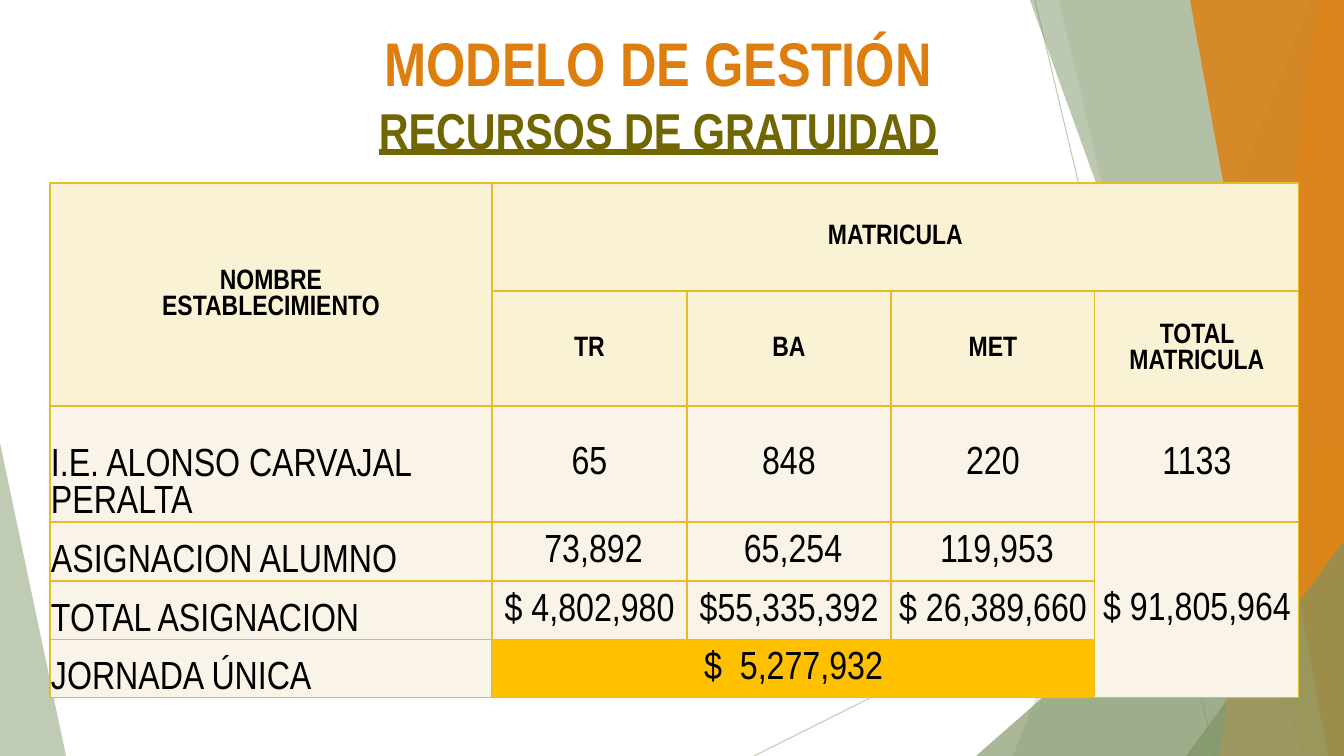
from lxml import etree
from pptx import Presentation
from pptx.dml.color import RGBColor as Rgb
from pptx.enum.shapes import MSO_CONNECTOR as Link
from pptx.enum.text import MSO_ANCHOR as Anchor, PP_ALIGN as Align
from pptx.oxml.ns import qn
from pptx.util import Pt

HUES = {
    "sage": "A5B592", "moss": "7D9263", "amber": "F3A447", "orange": "DD7E0E",
    "olive": "706702", "black": "000000", "gold": "E7BC29",
    "head": "FAF2D4", "body": "FAF3E8", "mark": "FFC000",
}
FONT = "Arial Narrow"
WIDE, HIGH = 1344, 756


def px(n):
    return round(n * 914400 / 100.8)


class Board:
    """Draws styled elements on one slide, with lengths in px."""

    def __init__(self, deck):
        deck.slide_width, deck.slide_height = px(WIDE), px(HIGH)
        self.slide = deck.slides.add_slide(deck.slide_layouts[6])
        self.shapes = self.slide.shapes

    def fade(self, fill, hue, alpha):
        fill.solid()
        fill.fore_color.rgb = Rgb.from_string(HUES[hue])
        tint = fill._xPr.find(".//" + qn("a:srgbClr"))
        etree.SubElement(tint, qn("a:alpha"), val=str(alpha * 1000))

    def facet(self, points, hue, alpha):
        pen = self.shapes.build_freeform(*map(px, points[0]))
        pen.add_line_segments([(px(x), px(y)) for x, y in points[1:]])
        shape = pen.convert_to_shape()
        shape.shadow.inherit = False
        shape.line.fill.background()
        self.fade(shape.fill, hue, alpha)

    def line(self, ends, hue, alpha):
        link = self.shapes.add_connector(Link.STRAIGHT, *map(px, ends))
        link.line.width = Pt(0.75)
        self.fade(link.line.fill, hue, alpha)
        etree.SubElement(link._element.spPr, qn("a:effectLst"))

    def style(self, run, size, hue, bold=False, under=False):
        font = run.font
        font.name, font.size, font.bold = FONT, Pt(size), bold
        font.underline = under
        font.color.rgb = Rgb.from_string(HUES[hue])

    def title(self, box, text, looks):
        """Sets one line of text per look, a (size, hue, underline) triple."""
        frame = self.shapes.add_textbox(*map(px, box)).text_frame
        frame.word_wrap = True
        frame.text = text
        para = frame.paragraphs[0]
        para.alignment = Align.CENTER
        for run, (size, hue, under) in zip(para.runs, looks):
            self.style(run, size, hue, True, under)

    def edge(self, cell):
        props = cell._tc.get_or_add_tcPr()
        for i, side in enumerate(("lnL", "lnR", "lnT", "lnB")):
            line = etree.Element(qn("a:" + side), w=str(Pt(1)))
            fill = etree.SubElement(line, qn("a:solidFill"))
            etree.SubElement(fill, qn("a:srgbClr"), val=HUES["gold"])
            props.insert(i, line)

    def cell(self, cell, text, hue, size, bold, left):
        cell.fill.solid()
        cell.fill.fore_color.rgb = Rgb.from_string(HUES[hue])
        self.edge(cell)
        cell.margin_left = cell.margin_right = cell.margin_top = px(1)
        cell.margin_bottom = 0
        cell.vertical_anchor = Anchor.BOTTOM if left else Anchor.MIDDLE
        cell.text_frame.text = text
        for para in cell.text_frame.paragraphs:
            para.alignment = Align.LEFT if left else Align.CENTER
            for run in para.runs:
                self.style(run, size, "black", bold)

    def table(self, spot, cols, rows, data, spans, marks):
        box = (*spot, sum(cols), sum(rows))
        grid = self.shapes.add_table(len(rows), len(cols), *map(px, box)).table
        for col, wide in zip(grid.columns, cols):
            col.width = px(wide)
        for row, high in zip(grid.rows, rows):
            row.height = px(high)
        for r, line in enumerate(data):
            top = r < 2
            for c, text in enumerate(line):
                hue = "mark" if (r, c) in marks else "head" if top else "body"
                self.cell(grid.cell(r, c), text, hue, 20 if top else 28, top,
                          c == 0 and not top)
        for start, end in spans:
            grid.cell(*start).merge(grid.cell(*end))
        return grid


FACETS = [
    ([(0, 443), (66, HIGH), (0, HIGH)], "sage", 70),
    ([(1310, 0), (1013, HIGH), (WIDE, HIGH), (WIDE, 0)], "sage", 36),
    ([(1059, 0), (1236, HIGH), (WIDE, HIGH), (WIDE, 0)], "sage", 20),
    ([(976, HIGH), (WIDE, 433), (WIDE, HIGH)], "moss", 66),
    ([(1030, 0), (1303, HIGH), (WIDE, HIGH), (WIDE, 0)], "moss", 50),
    ([(1318, 0), (1220, HIGH), (WIDE, HIGH), (WIDE, 0)], "amber", 70),
    ([(1190, 0), (1328, HIGH), (WIDE, HIGH), (WIDE, 0)], "orange", 82),
    ([(1186, HIGH), (WIDE, 541), (WIDE, HIGH)], "moss", 66),
]
LINES = [(754, HIGH, WIDE, 461), (1035, 0, 1215, HIGH)]
DATA = [
    ["NOMBRE\nESTABLECIMIENTO", "MATRICULA", "", "", ""],
    ["", "TR", "BA", "MET", "TOTAL MATRICULA"],
    ["I.E. ALONSO CARVAJAL PERALTA", "65", "848", "220", "1133"],
    ["ASIGNACION ALUMNO", "73,892", "65,254", "119,953", "$ 91,805,964"],
    ["TOTAL ASIGNACION", "$ 4,802,980", "$55,335,392", "$ 26,389,660", ""],
    ["JORNADA ÚNICA", "$  5,277,932", "", "", ""],
]
SPANS = [((0, 0), (1, 0)), ((0, 1), (0, 4)), ((3, 4), (5, 4)), ((5, 1), (5, 3))]


def main():
    deck = Presentation()
    board = Board(deck)
    board.facet(*FACETS[0])
    for ends in LINES:
        board.line(ends, "sage", 70)
    for facet in FACETS[1:]:
        board.facet(*facet)
    board.title((142, 20, 1033, 146), "MODELO DE GESTIÓN\vRECURSOS DE GRATUIDAD",
                [(44, "orange", False), (36, "olive", True)])
    grid = board.table((50, 183), [442, 195, 204, 204, 204],
                       [108, 115, 116, 59, 59, 58], DATA, SPANS,
                       {(5, 1), (5, 2), (5, 3)})
    for c in (1, 2, 3):
        grid.cell(3, c).margin_left = px(9)
    deck.save("out.pptx")


if __name__ == "__main__":
    main()
